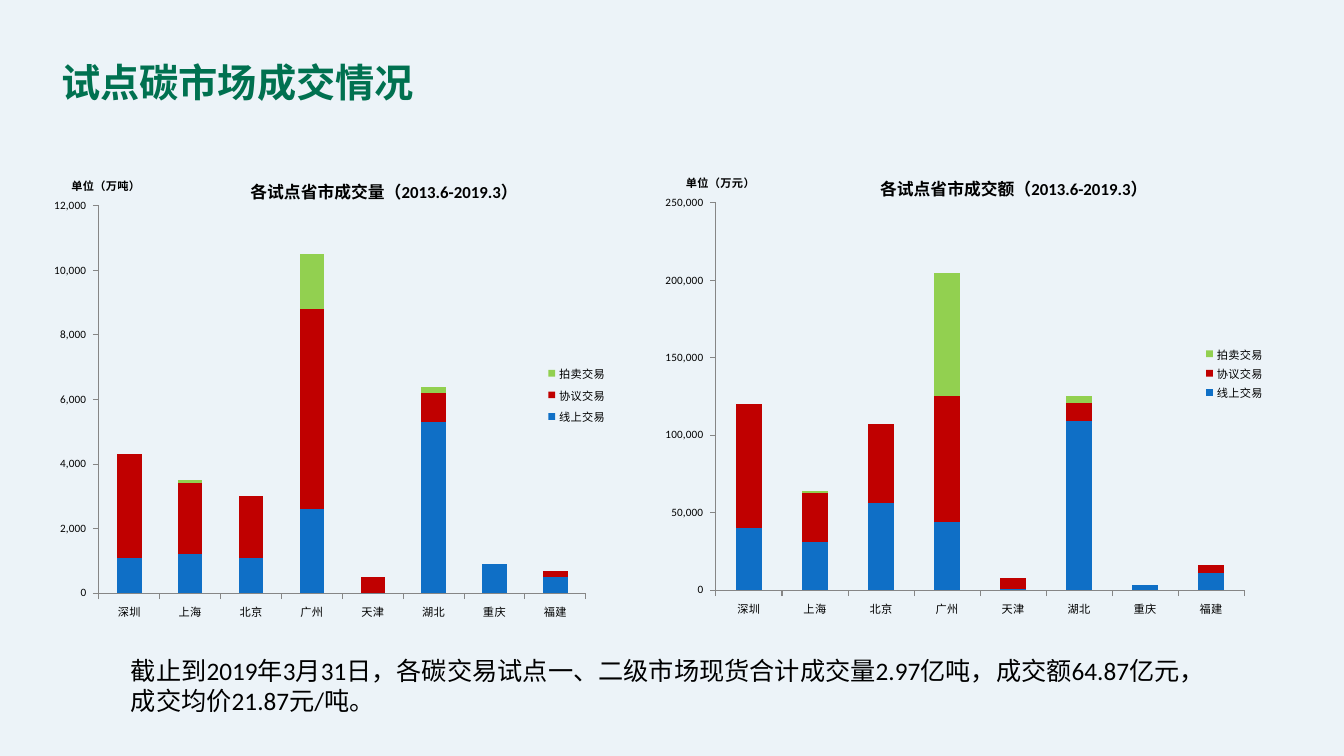
"""Build a slide with two stacked column charts on pilot carbon market trading."""
from dataclasses import dataclass

from lxml import etree
from pptx import Presentation
from pptx.chart.data import CategoryChartData
from pptx.dml.color import RGBColor
from pptx.enum.chart import XL_CHART_TYPE, XL_LEGEND_POSITION, XL_TICK_MARK
from pptx.enum.text import MSO_ANCHOR
from pptx.oxml.ns import qn
from pptx.util import Inches, Pt

STACKED = XL_CHART_TYPE.COLUMN_STACKED
LEGEND_RIGHT = XL_LEGEND_POSITION.RIGHT
TICK_OUTSIDE = XL_TICK_MARK.OUTSIDE
TICK_NONE = XL_TICK_MARK.NONE
MIDDLE = MSO_ANCHOR.MIDDLE
TOP = MSO_ANCHOR.TOP

PAGE_BLUE = RGBColor(0xEC, 0xF3, 0xF8)
TITLE_GREEN = RGBColor(0x00, 0x71, 0x50)
BLACK = RGBColor(0x00, 0x00, 0x00)
AXIS_GRAY = RGBColor(0x86, 0x86, 0x86)
ONLINE_BLUE = RGBColor(0x0F, 0x6F, 0xC6)
AGREEMENT_RED = RGBColor(0xC0, 0x00, 0x00)
AUCTION_GREEN = RGBColor(0x92, 0xD0, 0x50)

BODY_FONT = "Calibri"
NUMBER_FORMAT = r"#,##0_);[Red]\(#,##0\)"
CITIES = ("深圳", "上海", "北京", "广州", "天津", "湖北", "重庆", "福建")
TRADE_TYPES = (
    ("线上交易", ONLINE_BLUE),
    ("协议交易", AGREEMENT_RED),
    ("拍卖交易", AUCTION_GREEN),
)


@dataclass(frozen=True)
class TextSpec:
    """Wording, place and look of a text box."""
    text: str
    left: float
    top: float
    width: float
    height: float
    size: int
    font: str
    color: RGBColor
    bold: bool
    anchor: MSO_ANCHOR
    line_spacing: float


@dataclass(frozen=True)
class MarketChart:
    """Place, captions and values of one market chart."""
    left: float
    top: float
    width: float
    height: float
    title: str
    unit: str
    maximum: int
    step: int
    legend_top: float
    legend_height: float
    values: tuple


TEXTS = (
    TextSpec("试点碳市场成交情况", 0.51, 0.39, 6.08, 0.91, 28, "Montserrat",
             TITLE_GREEN, True, MIDDLE, 0.9),
    TextSpec("截止到2019年3月31日，各碳交易试点一、二级市场现货合计成交量2.97亿吨，"
             "成交额64.87亿元，成交均价21.87元/吨。",
             1.2, 6.45, 10.92, 0.71, 18, BODY_FONT, BLACK, False, TOP, 1.0),
)
CHARTS = (
    MarketChart(0.51, 1.58, 5.89, 4.63, "各试点省市成交量（2013.6-2019.3）",
                "单位（万吨）", 12000, 2000, 0.43, 0.15, (
                    (1100, 1200, 1100, 2600, 0, 5300, 900, 500),
                    (3200, 2200, 1900, 6200, 500, 900, 0, 200),
                    (0, 100, 0, 1700, 0, 200, 0, 0))),
    MarketChart(6.59, 1.55, 6.39, 4.63, "各试点省市成交额（2013.6-2019.3）",
                "单位（万元）", 250000, 50000, 0.4, 0.13, (
                    (40000, 31000, 56000, 44000, 1000, 109000, 3000, 11000),
                    (80000, 32000, 51000, 81000, 7000, 12000, 0, 5000),
                    (0, 1000, 0, 80000, 0, 4000, 0, 0))),
)


def place(parent, index: int, inner: bool = False, **fractions: float) -> None:
    """Give a chart part a manual layout in fractions of the chart."""
    for existing in parent.findall(qn("c:layout")):
        parent.remove(existing)
    layout = etree.Element(qn("c:layout"))
    manual = etree.SubElement(layout, qn("c:manualLayout"))
    settings = [("layoutTarget", "inner")] if inner else []
    settings += [("xMode", "edge"), ("yMode", "edge")]
    settings += [(name, str(value)) for name, value in fractions.items()]
    for name, value in settings:
        etree.SubElement(manual, qn(f"c:{name}")).set("val", value)
    parent.insert(index, layout)


def set_caption(title, text: str, size: int, x: float, y: float) -> None:
    """Fill and place a horizontal bold chart or axis title."""
    title.text_frame.text = text
    font = title.text_frame.paragraphs[0].runs[0].font
    font.name, font.size, font.bold = BODY_FONT, Pt(size), True
    font.color.rgb = BLACK
    element = title._element
    body = element.find(".//" + qn("a:bodyPr"))
    body.set("rot", "0")
    body.set("vert", "horz")
    place(element, 1, x=x, y=y)
    overlay = element.find(qn("c:overlay"))
    if overlay is None:
        overlay = etree.Element(qn("c:overlay"))
        element.insert(2, overlay)
    overlay.set("val", "1")


def add_text(page, item: TextSpec) -> None:
    """Add one text box."""
    box = page.shapes.add_textbox(Inches(item.left), Inches(item.top),
                                  Inches(item.width), Inches(item.height))
    frame = box.text_frame
    frame.text = item.text
    frame.word_wrap = True
    frame.vertical_anchor = item.anchor
    para = frame.paragraphs[0]
    para.line_spacing = item.line_spacing
    font = para.runs[0].font
    font.name, font.size, font.bold = item.font, Pt(item.size), item.bold
    font.color.rgb = item.color


def add_market_chart(page, item: MarketChart) -> None:
    """Add one stacked column chart."""
    data = CategoryChartData()
    data.categories = CITIES
    for (name, _), values in zip(TRADE_TYPES, item.values):
        data.add_series(name, values)
    chart = page.shapes.add_chart(
        STACKED, Inches(item.left), Inches(item.top),
        Inches(item.width), Inches(item.height), data).chart
    chart.font.name, chart.font.size = BODY_FONT, Pt(8)
    chart.font.color.rgb = BLACK

    plot = chart.plots[0]
    plot.gap_width, plot.overlap, plot.vary_by_categories = 150, 100, False
    for series, (_, color) in zip(plot.series, TRADE_TYPES):
        series.format.fill.solid()
        series.format.fill.fore_color.rgb = color

    value_axis = chart.value_axis
    for axis in (chart.category_axis, value_axis):
        axis.major_tick_mark, axis.minor_tick_mark = TICK_OUTSIDE, TICK_NONE
        axis.has_major_gridlines = False
        axis.format.line.color.rgb = AXIS_GRAY
        axis.format.line.width = Pt(0.75)
    value_axis.minimum_scale, value_axis.maximum_scale = 0, item.maximum
    value_axis.major_unit = item.step
    value_axis.tick_labels.number_format = NUMBER_FORMAT
    value_axis.tick_labels.number_format_is_linked = False

    chart.has_title = value_axis.has_title = True
    set_caption(chart.chart_title, item.title, 12, 0.33, 0.03)
    set_caption(value_axis.axis_title, item.unit, 8, 0.03, 0.03)
    chart.has_legend = True
    chart.legend.position = LEGEND_RIGHT
    chart.legend.include_in_layout = False
    place(chart.legend._element, 1, x=0.82, y=item.legend_top,
          w=0.13, h=item.legend_height)
    place(chart._chartSpace.chart.plotArea, 0, inner=True,
          x=0.08, y=0.1, w=0.82, h=0.83)


def main() -> None:
    """Build and save the deck."""
    deck = Presentation()
    deck.slide_width, deck.slide_height = Inches(13.33), Inches(7.5)
    page = deck.slides.add_slide(deck.slide_layouts[6])
    page.background.fill.solid()
    page.background.fill.fore_color.rgb = PAGE_BLUE
    for item in TEXTS:
        add_text(page, item)
    for item in CHARTS:
        add_market_chart(page, item)
    deck.save("out.pptx")


if __name__ == "__main__":
    main()
